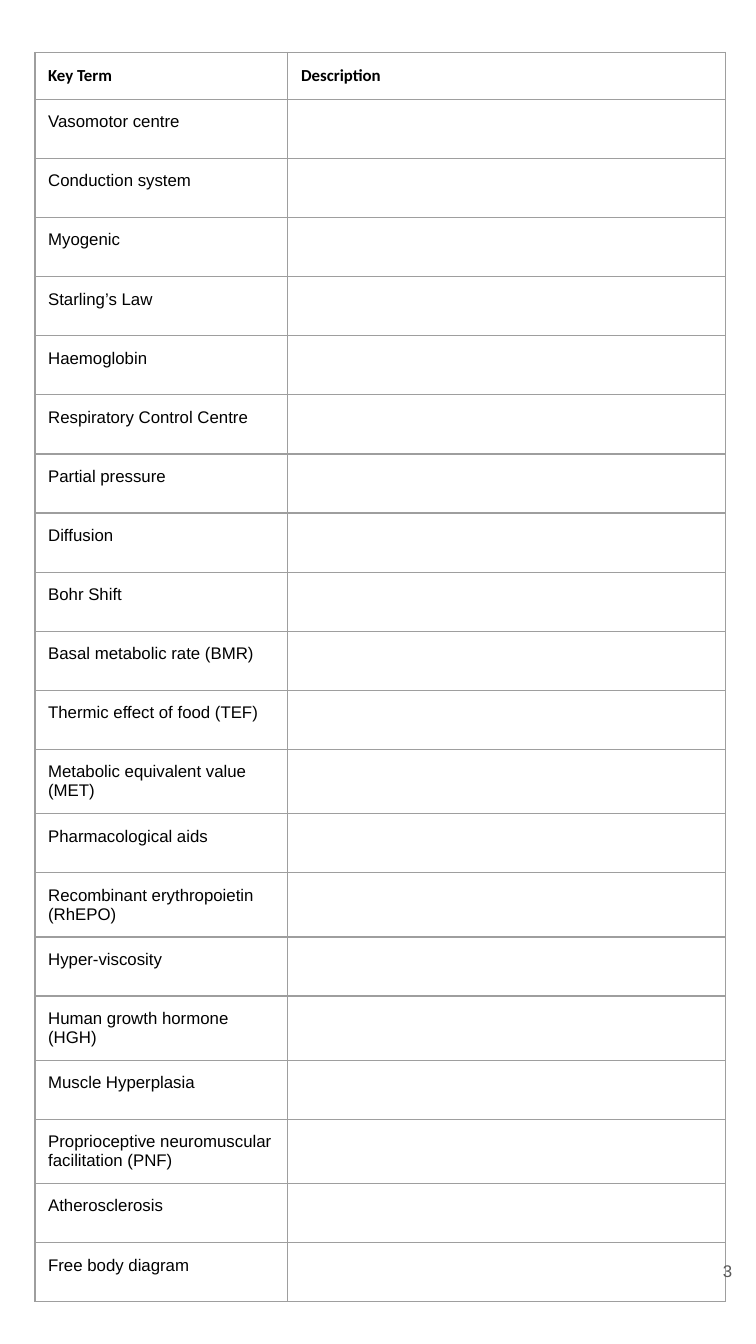
from dataclasses import dataclass
from typing import Optional

from lxml.etree import SubElement
from pptx import Presentation
from pptx.dml.color import RGBColor as Rgb
from pptx.enum.text import MSO_ANCHOR as Anchor, PP_ALIGN as Align
from pptx.oxml.ns import qn
from pptx.util import Cm, Pt


@dataclass(frozen=True)
class Theme:
    ink: Rgb = Rgb(0, 0, 0)
    grey: Rgb = Rgb(0x59, 0x59, 0x59)
    rule: str = "9E9E9E"
    line: Pt = Pt(0.75)
    size: Pt = Pt(9)
    head: str = "Calibri"
    body: str = "Arial"
    pad: Cm = Cm(0.25)


@dataclass(frozen=True)
class Label:
    text: str
    font: str
    color: Rgb
    bold: bool = False
    align: Optional[Align] = None


THEME = Theme()
TERMS = [
    "Vasomotor centre", "Conduction system", "Myogenic", "Starling’s Law",
    "Haemoglobin", "Respiratory Control Centre", "Partial pressure",
    "Diffusion", "Bohr Shift", "Basal metabolic rate (BMR)",
    "Thermic effect of food (TEF)", "Metabolic equivalent value (MET)",
    "Pharmacological aids", "Recombinant erythropoietin (RhEPO)",
    "Hyper-viscosity", "Human growth hormone (HGH)", "Muscle Hyperplasia",
    "Proprioceptive neuromuscular facilitation (PNF)", "Atherosclerosis",
    "Free body diagram",
]
WIDTHS = (Cm(4.78), Cm(8.28))
HEAD_ROW = Cm(0.74)
TERM_ROW = Cm(22.34 / len(TERMS))


def pad(box) -> None:
    """Set equal margins on a cell or a text frame."""
    box.margin_left = box.margin_right = THEME.pad
    box.margin_top = box.margin_bottom = THEME.pad


def write(frame, label: Label) -> None:
    para = frame.paragraphs[0]
    para.alignment = label.align
    run = para.add_run()
    run.text = label.text
    font = run.font
    font.name, font.size, font.bold = label.font, THEME.size, label.bold
    font.color.rgb = label.color


def frame_cell(cell) -> None:
    """Clear the fill and rule all four sides."""
    props = cell._tc.get_or_add_tcPr()
    for side in ("lnL", "lnR", "lnT", "lnB"):
        line = SubElement(props, qn(f"a:{side}"), w=str(int(THEME.line)))
        fill = SubElement(line, qn("a:solidFill"))
        SubElement(fill, qn("a:srgbClr"), val=THEME.rule)
    cell.fill.background()


def fill_cell(cell, label: Label) -> None:
    pad(cell)
    write(cell.text_frame, label)


def add_terms(slide) -> None:
    high = HEAD_ROW + TERM_ROW * len(TERMS)
    table = slide.shapes.add_table(
        len(TERMS) + 1, len(WIDTHS), Cm(0.66), Cm(0.99), sum(WIDTHS), high
    ).table
    table.first_row = table.horz_banding = False
    for col, width in zip(table.columns, WIDTHS):
        col.width = width
    for row in table.rows:
        row.height = TERM_ROW
    table.rows[0].height = HEAD_ROW
    for cell in table.iter_cells():
        frame_cell(cell)

    fill_cell(table.cell(0, 0), Label("Key Term", THEME.head, THEME.ink, True))
    about = table.cell(0, 1)
    fill_cell(about, Label("Description", THEME.head, THEME.ink, True, Align.JUSTIFY))
    about.margin_left = 0
    props = about.text_frame.paragraphs[0]._p.get_or_add_pPr()
    props.set("marL", str(int(THEME.pad)))
    props.set("indent", "0")
    for row, term in enumerate(TERMS, 1):
        fill_cell(table.cell(row, 0), Label(term, THEME.body, THEME.ink))


def add_number(slide) -> None:
    box = slide.shapes.add_textbox(Cm(13.23), Cm(23.04), Cm(0.86), Cm(1.96))
    frame = box.text_frame
    frame.word_wrap = True
    frame.vertical_anchor = Anchor.MIDDLE
    pad(frame)
    write(frame, Label("3", THEME.body, THEME.grey, align=Align.RIGHT))


def main() -> None:
    deck = Presentation()
    deck.slide_width, deck.slide_height = Cm(14.29), Cm(25.4)
    slide = deck.slides.add_slide(deck.slide_layouts[6])
    add_terms(slide)
    add_number(slide)
    deck.save("out.pptx")


if __name__ == "__main__":
    main()
